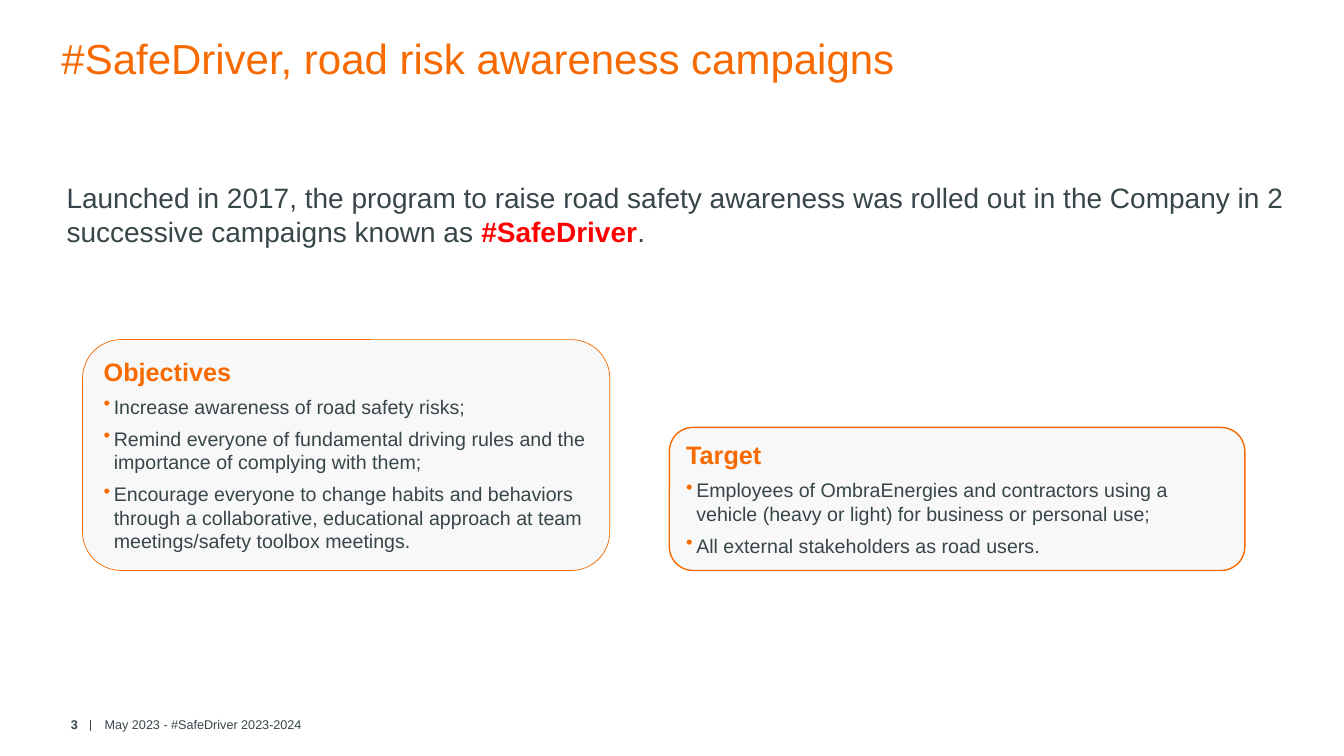
from lxml import etree
from pptx import Presentation
from pptx.dml.color import RGBColor
from pptx.enum.shapes import MSO_CONNECTOR, MSO_SHAPE
from pptx.enum.text import MSO_ANCHOR, MSO_AUTO_SIZE, PP_ALIGN
from pptx.oxml.ns import qn
from pptx.util import Pt

ORANGE = RGBColor(0xF6, 0x6A, 0x00)
SLATE = RGBColor(0x37, 0x46, 0x49)
RED = RGBColor(0xFF, 0x00, 0x00)
PALE = RGBColor(0xF8, 0xF8, 0xF8)
WHITE = RGBColor(0xFF, 0xFF, 0xFF)
FONT = "Arial"
LEFT, RIGHT = PP_ALIGN.LEFT, PP_ALIGN.RIGHT
TOP, MIDDLE = MSO_ANCHOR.TOP, MSO_ANCHOR.MIDDLE
NO_FIT, GROW = MSO_AUTO_SIZE.NONE, MSO_AUTO_SIZE.SHAPE_TO_FIT_TEXT
STRAIGHT = MSO_CONNECTOR.STRAIGHT
ROUNDED = MSO_SHAPE.ROUNDED_RECTANGLE

OBJECTIVES = [
    "Increase awareness of road safety risks;",
    "Remind everyone of fundamental driving rules and the importance of complying with them;",
    "Encourage everyone to change habits and behaviors through a collaborative, "
    "educational approach at team meetings/safety toolbox meetings.",
]
TARGET = [
    "Employees of OmbraEnergies and contractors using a vehicle (heavy or light) "
    "for business or personal use;",
    "All external stakeholders as road users.",
]


def add_run(p, text, size, color, bold=False):
    """Append one formatted run to a paragraph."""
    r = p.add_run()
    r.text = text
    r.font.name = FONT
    r.font.size = Pt(size)
    r.font.bold = bold
    r.font.color.rgb = color


def place(sp, box, anchor=TOP, fit=NO_FIT):
    """Move a shape to its box and return its prepared text frame."""
    sp.left, sp.top, sp.width, sp.height = map(Pt, box)
    tf = sp.text_frame
    tf.word_wrap = True
    tf.auto_size = fit
    tf.vertical_anchor = anchor
    return tf


def set_bullet(p, char=None):
    """Give a paragraph an orange hanging bullet, or none at all."""
    pPr = p._p.get_or_add_pPr()
    hang = Pt(7.2) if char else 0
    pPr.set("marL", str(hang))
    pPr.set("indent", str(-hang))
    if char:
        color = etree.SubElement(pPr, qn("a:buClr"))
        etree.SubElement(color, qn("a:srgbClr"), val=str(ORANGE))
        etree.SubElement(pPr, qn("a:buChar"), char=char)
    else:
        etree.SubElement(pPr, qn("a:buNone"))


def add_title(s, box):
    """Fill the title placeholder."""
    p = place(s.shapes.title, box).paragraphs[0]
    p.alignment = LEFT
    add_run(p, "#SafeDriver, road risk awareness campaigns", 30, ORANGE)


def add_intro(s, box):
    """Fill the body placeholder with the programme introduction."""
    p = place(s.placeholders[1], box).paragraphs[0]
    p.space_before = Pt(0)
    p.space_after = Pt(6)
    set_bullet(p)
    add_run(p, "Launched in 2017, the program to raise road safety awareness was rolled out "
               "in the Company in 2 successive campaigns known as ", 20, SLATE)
    add_run(p, "#SafeDriver", 20, RED, True)
    add_run(p, ".", 20, SLATE)


def add_card(s, box, heading, items, line_width):
    """Draw a rounded card with a heading and a bulleted list."""
    sp = s.shapes.add_shape(ROUNDED, *map(Pt, box))
    sp.shadow.inherit = False
    sp.fill.solid()
    sp.fill.fore_color.rgb = PALE
    sp.line.color.rgb = ORANGE
    sp.line.width = Pt(line_width)
    tf = place(sp, box, fit=GROW)
    p = tf.paragraphs[0]
    p.alignment = LEFT
    p.space_after = Pt(6)
    add_run(p, heading, 18, ORANGE, True)
    for item in items:
        p = tf.add_paragraph()
        p.alignment = LEFT
        p.space_after = Pt(6)
        set_bullet(p, "•")
        add_run(p, item, 14, SLATE)


def add_footer(s, box):
    """Place the page number, separator and date line."""
    x, y, w, h = box
    split = x + 47.5
    parts = [
        ((x, y, 45.4, h), "3", RIGHT, True),
        ((split + 2.9, y, x + w - split - 2.9, h), "May 2023 - #SafeDriver 2023-2024", LEFT, False),
    ]
    for part, text, align, bold in parts:
        p = place(s.shapes.add_textbox(*map(Pt, part)), part, MIDDLE).paragraphs[0]
        p.alignment = align
        add_run(p, text, 9, SLATE, bold)
    bar = s.shapes.add_connector(STRAIGHT, Pt(split), Pt(y + 6.5), Pt(split), Pt(y + 14.4))
    bar.line.color.rgb = SLATE
    bar.line.width = Pt(1)
    etree.SubElement(bar._element.spPr, qn("a:effectLst"))


def main():
    """Build and save the slide."""
    prs = Presentation()
    prs.slide_width, prs.slide_height = Pt(960), Pt(540)
    s = prs.slides.add_slide(prs.slide_layouts[1])
    s.background.fill.solid()
    s.background.fill.fore_color.rgb = WHITE
    add_title(s, (36.7, 19.4, 765.4, 79.2))
    add_intro(s, (40.3, 125.3, 887, 382.3))
    add_card(s, (59, 242.6, 376.6, 164.9), "Objectives", OBJECTIVES, 0.5)
    add_card(s, (478.1, 305.3, 411.1, 102.2), "Target", TARGET, 1)
    add_footer(s, (17.3, 507.6, 334, 20.2))
    prs.save("out.pptx")


if __name__ == "__main__":
    main()
